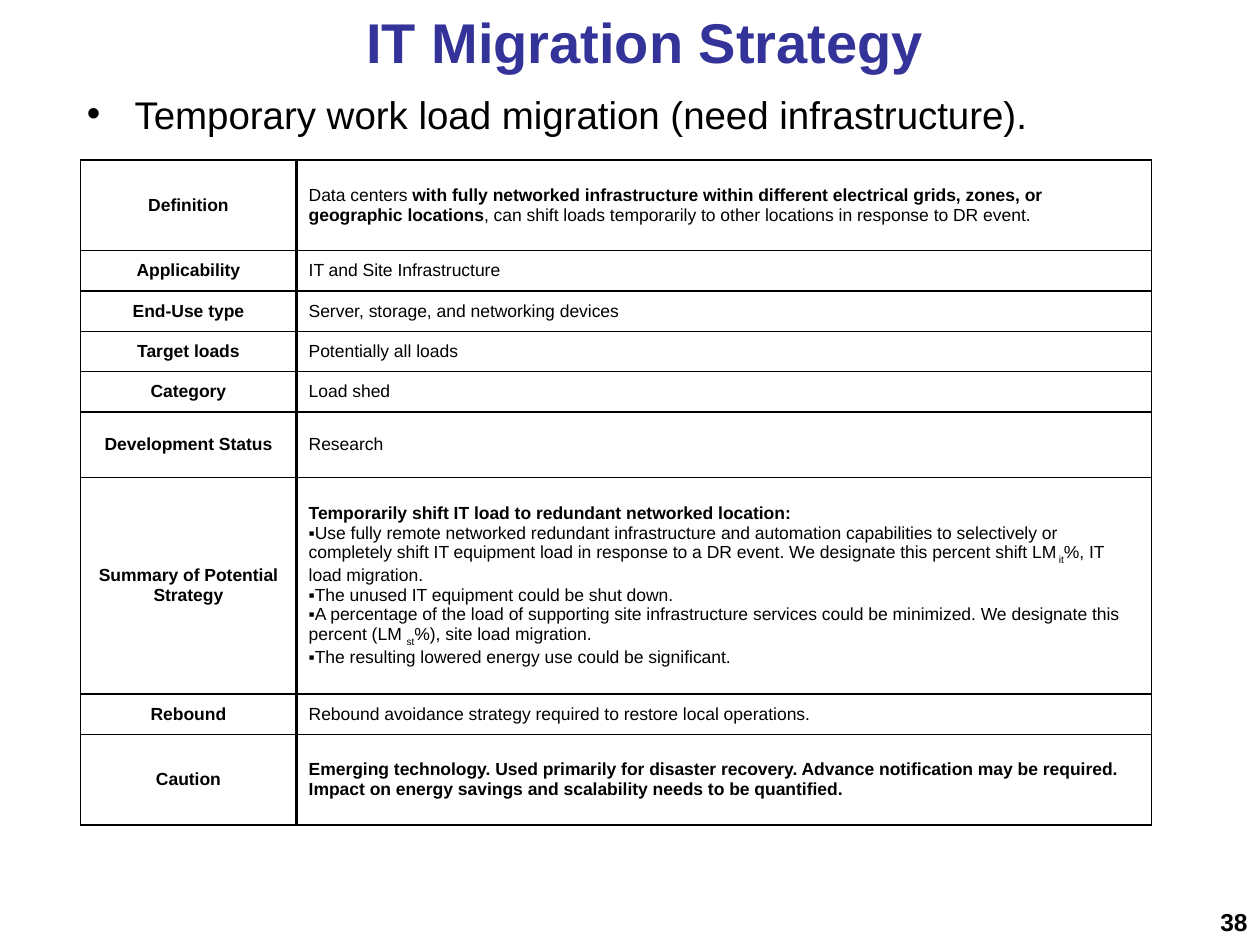
from lxml import etree
from pptx import Presentation
from pptx import util as u
from pptx.dml.color import RGBColor
from pptx.enum import text
from pptx.oxml import ns

COLORS = {"title": "333399", "ink": "000000"}
FONT = "Arial"
LEFT, CENTER, RIGHT = text.PP_ALIGN.LEFT, text.PP_ALIGN.CENTER, text.PP_ALIGN.RIGHT
TOP, MIDDLE = text.MSO_ANCHOR.TOP, text.MSO_ANCHOR.MIDDLE
BOLD, SUBSCRIPT = "bold", "subscript"

TEXT_BOXES = [
    {"box": (0.58, 0.01, 9.08, 0.64), "text": "IT Migration Strategy",
     "size": 32, "bold": True, "color": "title", "align": CENTER, "anchor": MIDDLE},
    {"box": (7.67, 7.15, 2.33, 0.52), "text": "38",
     "size": 14, "bold": True, "color": "ink", "align": RIGHT, "anchor": TOP},
    {"box": (0.59, 0.67, 9.08, 1.17), "text": "Temporary work load migration (need infrastructure).",
     "size": 22, "bold": False, "color": "ink", "align": LEFT, "anchor": TOP,
     "bullet": "•", "indent": 0.38},
]

SUMMARY = [
    [("Temporarily shift IT load to redundant networked location:", BOLD)],
    [("Use fully remote networked redundant infrastructure and automation capabilities to "
      "selectively or completely shift IT equipment load in response to a DR event. "
      "We designate this percent shift LM", None),
     (" it", SUBSCRIPT), ("%, IT load migration.", None)],
    [("The unused IT equipment could be shut down.", None)],
    [("A percentage of the load of supporting site infrastructure services could be minimized. "
      "We designate this percent (LM ", None),
     ("st", SUBSCRIPT), ("%), site load migration.", None)],
    [("The resulting lowered energy use could be significant.", None)],
]
ROWS = [
    ("Definition", 0.72, [[
        ("Data centers ", None),
        ("with fully networked infrastructure within different electrical grids, zones, "
         "or geographic locations", BOLD),
        (", can shift loads temporarily to other locations in response to DR event.", None)]]),
    ("Applicability", 0.32, [[("IT and Site Infrastructure", None)]]),
    ("End-Use type", 0.32, [[("Server, storage, and networking devices", None)]]),
    ("Target loads", 0.32, [[("Potentially all loads", None)]]),
    ("Category", 0.32, [[("Load shed", None)]]),
    ("Development Status", 0.52, [[("Research", None)]]),
    ("Summary of Potential Strategy", 1.72, SUMMARY),
    ("Rebound", 0.32, [[("Rebound avoidance strategy required to restore local operations.", None)]]),
    ("Caution", 0.72, [[
        ("Emerging technology. Used primarily for disaster recovery. Advance notification may be "
         "required. Impact on energy savings and scalability needs to be quantified.", BOLD)]]),
]
TABLE_LEFT, TABLE_TOP = 0.64, 1.27
COLUMNS = (1.71, 6.79)
BORDERS = ({"L": 1, "R": 2, "T": 1, "B": 1}, {"L": 2, "R": 1, "T": 1, "B": 1})


def add_element(parent, tag, **attributes):
    element = etree.SubElement(parent, ns.qn(tag))
    for name, value in attributes.items():
        element.set(name, str(value))
    return element


def add_bullet(paragraph, character, indent=0):
    properties = paragraph._p.get_or_add_pPr()
    properties.set("marL", str(u.Inches(indent)))
    properties.set("indent", str(-u.Inches(indent)))
    add_element(properties, "a:buFont", typeface=FONT)
    add_element(properties, "a:buChar", char=character)


def add_run(paragraph, words, size, bold, color="ink"):
    run = paragraph.add_run()
    run.text = words
    for name, value in {"name": FONT, "size": u.Pt(size), "bold": bold}.items():
        setattr(run.font, name, value)
    run.font.color.rgb = RGBColor.from_string(COLORS[color])
    return run


def add_text_box(slide, item):
    frame = slide.shapes.add_textbox(*map(u.Inches, item["box"])).text_frame
    frame.word_wrap = True
    frame.vertical_anchor = item["anchor"]
    paragraph = frame.paragraphs[0]
    paragraph.alignment = item["align"]
    if "bullet" in item:
        add_bullet(paragraph, item["bullet"], item["indent"])
    add_run(paragraph, item["text"], item["size"], item["bold"], item["color"])


def fill_cell(cell, paragraphs, align, borders):
    cell.vertical_anchor = MIDDLE
    for index, parts in enumerate(paragraphs):
        frame = cell.text_frame
        paragraph = frame.add_paragraph() if index else frame.paragraphs[0]
        paragraph.alignment = align
        if index:
            add_bullet(paragraph, "▪")
        if len(paragraphs) > 1:
            tabs = add_element(paragraph._p.get_or_add_pPr(), "a:tabLst")
            add_element(tabs, "a:tab", pos=u.Inches(0.25), algn="l")
        for words, style in parts:
            run = add_run(paragraph, words, 10, style == BOLD)
            if style == SUBSCRIPT:
                run._r.get_or_add_rPr().set("baseline", "-30000")
    properties = cell._tc.get_or_add_tcPr()
    for side, width in borders.items():
        line = add_element(properties, "a:ln" + side, w=u.Pt(width))
        add_element(add_element(line, "a:solidFill"), "a:srgbClr", val=COLORS["ink"])
    cell.fill.background()


def add_strategy_table(slide):
    heights = [height for _, height, _ in ROWS]
    box = (TABLE_LEFT, TABLE_TOP, sum(COLUMNS), sum(heights))
    table = slide.shapes.add_table(len(ROWS), len(COLUMNS), *map(u.Inches, box)).table
    table.first_row = table.horz_banding = False
    for column, width in zip(table.columns, COLUMNS):
        column.width = u.Inches(width)
    for row, (label, height, description) in zip(table.rows, ROWS):
        row.height = u.Inches(height)
        contents = ([[(label, BOLD)]], description)
        for cell, paragraphs, align, borders in zip(row.cells, contents, (CENTER, LEFT), BORDERS):
            fill_cell(cell, paragraphs, align, borders)


def main():
    presentation = Presentation()
    presentation.slide_width, presentation.slide_height = u.Inches(10), u.Inches(7.5)
    slide = presentation.slides.add_slide(presentation.slide_layouts[6])
    for item in TEXT_BOXES:
        add_text_box(slide, item)
    add_strategy_table(slide)
    presentation.save("out.pptx")


if __name__ == "__main__":
    main()
